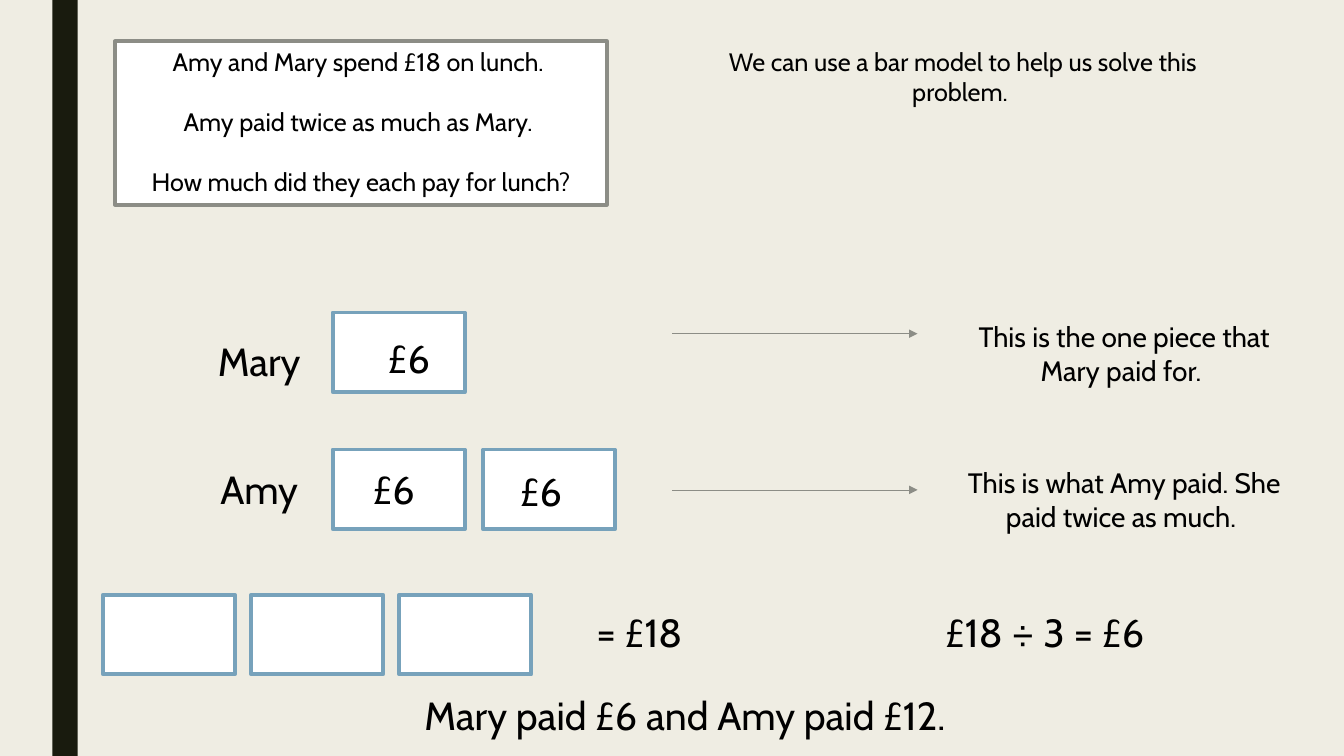
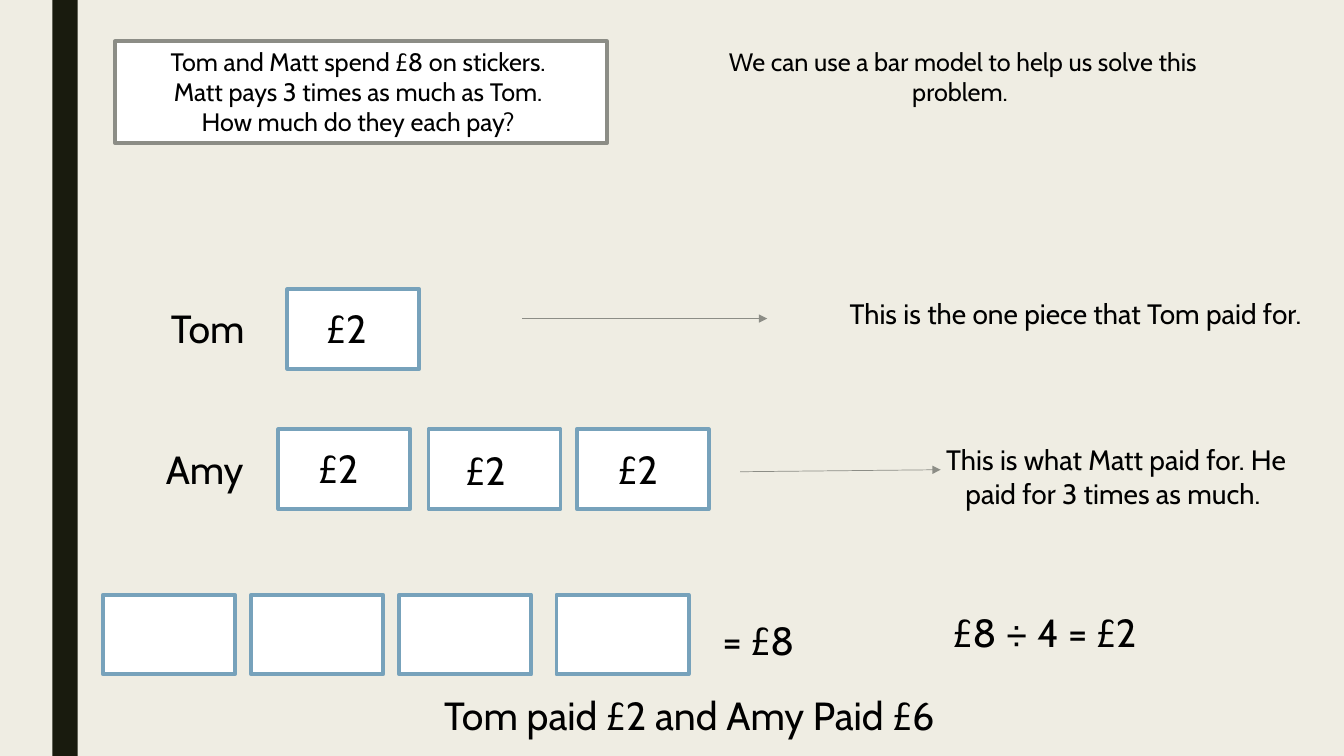
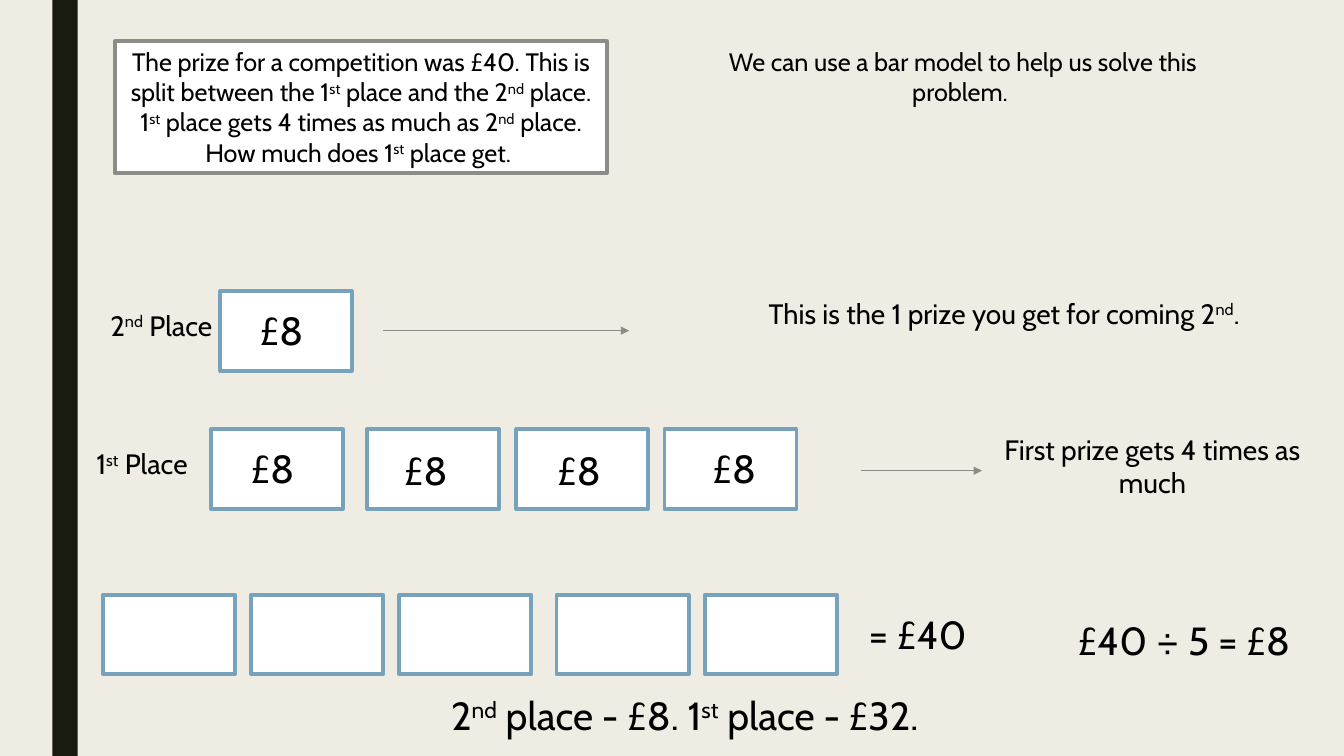
import pptx
import pptx.util
import pptx.dml.color
import pptx.enum.shapes
import pptx.enum.text
import pptx.oxml
import pptx.oxml.ns

SCALE = 9144  # EMU in one px, 100 px to the inch
WIDE, HIGH = 1333, 750
FONT, INK, WHITE = "Cabin", "000000", "FFFFFF"
PAPER, BAND, GREY, BLUE = "EFEDE3", "191B0E", "8C8D86", "77A2BB"
SMALL, MID, BIG = 18, 20, 28
CELL_W, CELL_H = 131, 79
PARTS_X = (102, 249, 396, 552, 699)
ALIGN = pptx.enum.text.PP_ALIGN


def px(num):
    return pptx.util.Emu(num * SCALE)


def hue(code):
    return pptx.dml.color.RGBColor.from_string(code)


class Deck:
    def __init__(self):
        self.prs = pptx.Presentation()
        self.prs.slide_width, self.prs.slide_height = px(WIDE), px(HIGH)
        self.fill(self.prs.slide_master.background, PAPER)
        self.slide = None

    def fill(self, item, code):
        item.fill.solid()
        item.fill.fore_color.rgb = hue(code)

    def edge(self, item, code, width):
        item.line.color.rgb = hue(code)
        item.line.width = pptx.util.Pt(width)

    def page(self):
        self.slide = self.prs.slides.add_slide(self.prs.slide_layouts[6])
        self.rect(52, 0, 25, HIGH, BAND)

    def rect(self, x, y, w, h, code, line=None):
        kind = pptx.enum.shapes.MSO_SHAPE.RECTANGLE
        box = self.slide.shapes.add_shape(kind, px(x), px(y), px(w), px(h))
        box.shadow.inherit = False
        self.fill(box, code)
        if line:
            self.edge(box, line, 2.75)
        else:
            box.line.fill.background()
        return box

    def cell(self, x, y):
        self.rect(x, y, CELL_W, CELL_H, WHITE, BLUE)

    def text(self, x, y, w, h, words, size, align=ALIGN.CENTER):
        box = self.slide.shapes.add_textbox(px(x), px(y), px(w), px(h))
        self.words(box, [words], size, align)

    def words(self, box, lines, size, align=ALIGN.CENTER, gap=0):
        """Words between two ^ marks are raised."""
        frame = box.text_frame
        frame.word_wrap = True
        frame.vertical_anchor = pptx.enum.text.MSO_ANCHOR.TOP
        look = {"name": FONT, "size": pptx.util.Pt(size)}
        for i, line in enumerate(lines):
            para = frame.add_paragraph() if i else frame.paragraphs[0]
            para.alignment = align
            para.space_before = pptx.util.Pt(gap if i else 0)
            for j, part in enumerate(line.split("^")):
                run = para.add_run()
                run.text = part
                for key, val in look.items():
                    setattr(run.font, key, val)
                run.font.color.rgb = hue(INK)
                if j % 2:
                    run.font._element.set("baseline", "30000")

    def arrow(self, x1, y1, x2, y2):
        kind = pptx.enum.shapes.MSO_CONNECTOR.STRAIGHT
        line = self.slide.shapes.add_connector(kind, px(x1), px(y1), px(x2), px(y2))
        self.edge(line, GREY, 0.5)
        props = line._element.spPr
        tip = pptx.oxml.parse_xml(
            '<a:tailEnd %s type="triangle"/>' % pptx.oxml.ns.nsdecls("a"))
        props.find(pptx.oxml.ns.qn("a:ln")).append(tip)
        props.append(pptx.oxml.parse_xml(
            "<a:effectLst %s/>" % pptx.oxml.ns.nsdecls("a")))

    def task(self, lines, high, gap=0):
        box = self.rect(114, 41, 488, high, WHITE, GREY)
        self.words(box, lines, SMALL, gap=gap)
        self.text(711, 41, 488, 71,
                  "We can use a bar model to help us solve this problem. ", SMALL)

    def row(self, name, y, cells, price, arrow, note):
        """name: x, y, size, words; cells: cell x, price x, price y."""
        x, top, size, words = name
        self.text(x, top, 146, 57, words, size)
        for left, inner, mid in cells:
            self.cell(left, y)
            self.text(inner, mid, 66, 57, price, BIG, ALIGN.LEFT)
        self.arrow(*arrow)
        self.text(*note, MID)

    def total(self, count, whole, split, answer):
        """whole and split: x, y, words."""
        for x in PARTS_X[:count]:
            self.cell(x, 590)
        for (x, y, words), wide in ((whole, 195), (split, 359)):
            self.text(x, y, wide, 57, words, BIG)
        self.text(168, 681, 1031, 57, answer, BIG)


def main():
    deck = Deck()

    # Lunch: twice as much
    deck.page()
    deck.task(["Amy and Mary spend £18 on lunch. ",
               "Amy paid twice as much as Mary. ",
               "How much did they each pay for lunch?"], 162, 21.4)
    deck.row((184, 330, BIG, "Mary"), 310, [(330, 375, 327)], "£6",
             (667, 331, 910, 331),
             (934, 312, 362, 77, "This is the one piece that Mary paid for. "))
    deck.row((184, 457, BIG, "Amy"), 446, [(330, 360, 457), (479, 506, 459)], "£6",
             (667, 486, 910, 486),
             (934, 457, 362, 77, "This is what Amy paid. She paid twice as much. "))
    deck.total(3, (541, 599, "= £18 "), (861, 599, "£18 ÷ 3 = £6 "),
               "Mary paid £6 and Amy paid £12. ")

    # Stickers: 3 times as much
    deck.page()
    deck.task(["Tom and Matt spend £8 on stickers. ",
               "Matt pays 3 times as much as Tom. ",
               "How much do they each pay? "], 101)
    deck.row((133, 297, BIG, "Tom"), 287, [(285, 314, 297)], "£2",
             (518, 316, 761, 316),
             (826, 289, 488, 44, "This is the one piece that Tom paid for. "))
    deck.row((130, 437, BIG, "Amy"), 426,
             [(276, 306, 436), (425, 452, 438), (572, 603, 437)], "£2",
             (734, 468, 933, 466),
             (926, 434, 362, 77,
              "This is what Matt paid for. He paid for 3 times as much. "))
    deck.total(4, (659, 607, "= £8 "), (861, 599, "£8 ÷ 4 = £2 "),
               "Tom paid £2 and Amy Paid £6")

    # Prize: 4 times as much
    deck.page()
    deck.task(["The prize for a competition was £40. This is split between "
               "the 1^st^ place and the 2^nd^ place. 1^st^ place gets 4 times as "
               "much as 2^nd^ place. How much does 1^st^ place get. "], 131)
    deck.row((87, 301, MID, "2^nd^ Place"), 289, [(218, 248, 299)], "£8",
             (380, 328, 624, 328),
             (683, 289, 632, 44, "This is the 1 prize you get for coming 2^nd^. "))
    deck.row((71, 438, MID, "1^st^ Place "), 426,
             [(209, 239, 436), (364, 391, 438), (512, 543, 438), (659, 697, 436)],
             "£8", (854, 467, 974, 467),
             (962, 424, 362, 77, "First prize gets 4 times as much"))
    deck.total(5, (817, 601, "= £40 "), (999, 607, "£40 ÷ 5 = £8 "),
               "2^nd^ place - £8. 1^st^ place - £32. ")

    deck.prs.save("out.pptx")


if __name__ == "__main__":
    main()
